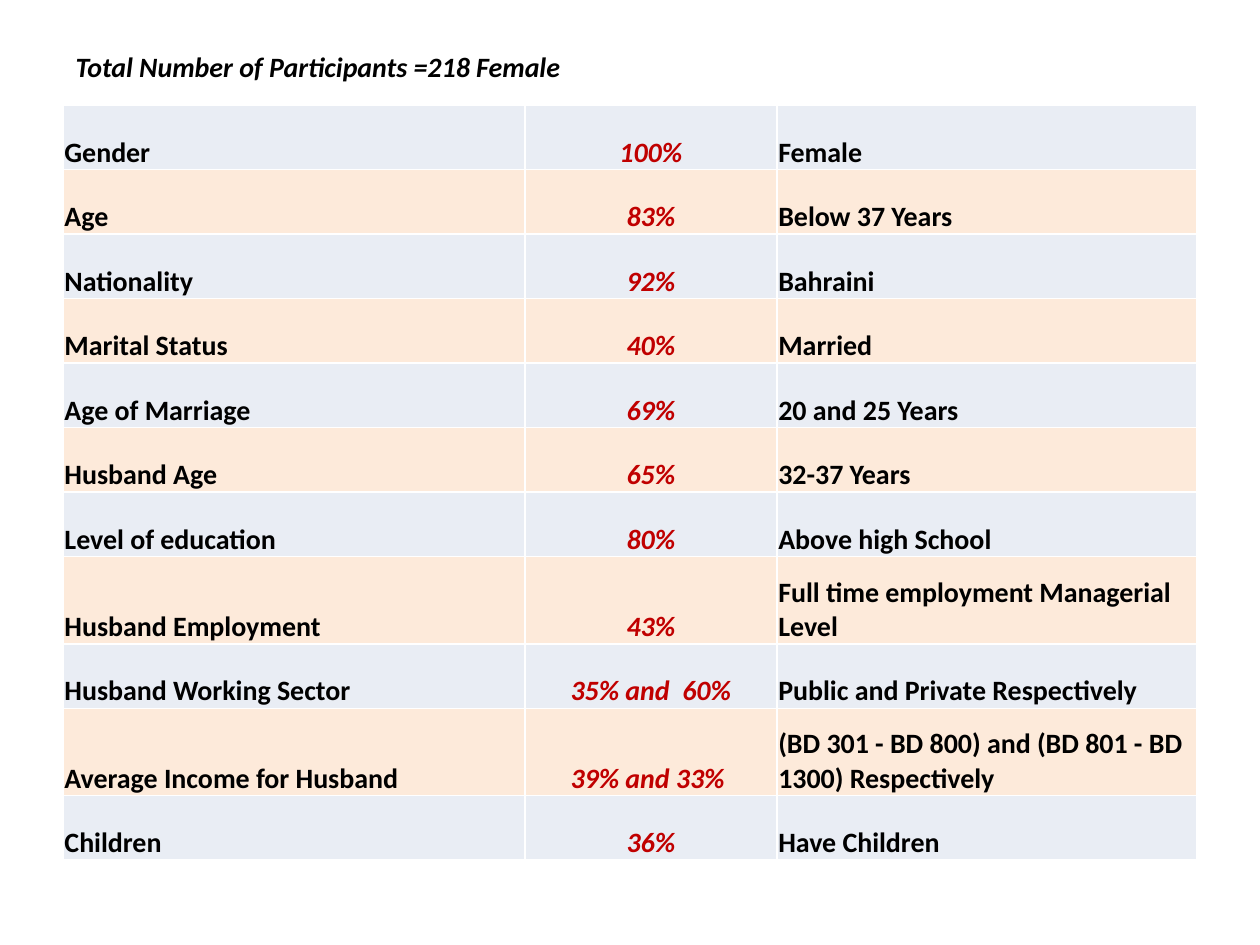
import pptx
import pptx.util
import pptx.dml.color
import pptx.enum.text
import pptx.oxml.ns
import lxml.etree

Cm = pptx.util.Cm
Pt = pptx.util.Pt
RGBColor = pptx.dml.color.RGBColor
PP_ALIGN = pptx.enum.text.PP_ALIGN
MSO_ANCHOR = pptx.enum.text.MSO_ANCHOR

FONT = "Calibri"
BLACK = RGBColor(0x00, 0x00, 0x00)
RED = RGBColor(0xC0, 0x00, 0x00)
WHITE = RGBColor(0xFF, 0xFF, 0xFF)
BAND_COLORS = (RGBColor(0xE9, 0xED, 0xF4), RGBColor(0xFD, 0xEA, 0xDA))

COL_WIDTHS = (9.31, 5.08, 8.47)
ROW_HEIGHT = 1.3
TALL_ROW_HEIGHT = 1.76
TALL_ROWS = ("Husband Employment", "Average Income for Husband")

PROFILE = (
    ("Gender", "100%", "Female"),
    ("Age", "83%", "Below 37 Years"),
    ("Nationality", "92%", "Bahraini"),
    ("Marital Status", "40%", "Married"),
    ("Age of Marriage", "69%", "20 and 25 Years"),
    ("Husband Age", "65%", "32-37 Years"),
    ("Level of education", "80%", "Above high School"),
    ("Husband Employment", "43%", "Full time employment Managerial Level"),
    ("Husband Working Sector", "35% and  60%", "Public and Private Respectively"),
    ("Average Income for Husband", "39% and 33% ",
     "(BD 301 - BD 800) and (BD 801 - BD 1300) Respectively"),
    ("Children", "36%", "Have Children"),
)


def add_run(p, text, color, italic):
    r = p.add_run()
    r.text = text
    r.font.name = FONT
    r.font.size = Pt(16)
    r.font.bold = True
    r.font.italic = italic
    r.font.color.rgb = color


def set_borders(cell, color, width):
    qn = pptx.oxml.ns.qn
    tc_pr = cell._tc.get_or_add_tcPr()
    for side in ("a:lnL", "a:lnR", "a:lnT", "a:lnB"):
        ln = lxml.etree.SubElement(tc_pr, qn(side), w=str(width))
        fill = lxml.etree.SubElement(ln, qn("a:solidFill"))
        lxml.etree.SubElement(fill, qn("a:srgbClr"), val=str(color))


def place_title(s, left, top, width, height):
    sp = s.shapes.title
    sp.left, sp.top, sp.width, sp.height = left, top, width, height
    tf = sp.text_frame
    tf.word_wrap = True
    tf.auto_size = pptx.enum.text.MSO_AUTO_SIZE.NONE
    tf.vertical_anchor = MSO_ANCHOR.MIDDLE
    p = tf.paragraphs[0]
    p.alignment = PP_ALIGN.LEFT
    add_run(p, "Total Number of Participants =218 Female", BLACK, True)


def fill_cell(cell, text, band_color, is_share):
    set_borders(cell, WHITE, Pt(1))
    cell.fill.solid()
    cell.fill.fore_color.rgb = band_color
    cell.margin_left = cell.margin_right = cell.margin_top = Cm(0.03)
    cell.margin_bottom = 0
    cell.vertical_anchor = MSO_ANCHOR.BOTTOM
    p = cell.text_frame.paragraphs[0]
    p.alignment = PP_ALIGN.CENTER if is_share else PP_ALIGN.LEFT
    add_run(p, text, RED if is_share else BLACK, is_share)


def place_profile_table(s, left, top, width, height):
    frame = s.shapes.add_table(len(PROFILE), len(COL_WIDTHS), left, top, width, height)
    table = frame.table
    table.first_row = False
    table.horz_banding = False
    for column, col_width in zip(table.columns, COL_WIDTHS):
        column.width = Cm(col_width)
    for i, (row, texts) in enumerate(zip(table.rows, PROFILE)):
        row.height = Cm(TALL_ROW_HEIGHT if texts[0] in TALL_ROWS else ROW_HEIGHT)
        for j, text in enumerate(texts):
            fill_cell(row.cells[j], text, BAND_COLORS[i % 2], j == 1)


def main():
    prs = pptx.Presentation()
    prs.slide_width, prs.slide_height = Cm(25.4), Cm(19.05)
    s = prs.slides.add_slide(prs.slide_layouts[5])
    place_title(s, Cm(1.27), Cm(0.76), Cm(22.86), Cm(1.14))
    place_profile_table(s, Cm(1.27), Cm(2.12), Cm(22.86), Cm(15.22))
    prs.save("out.pptx")


if __name__ == "__main__":
    main()
